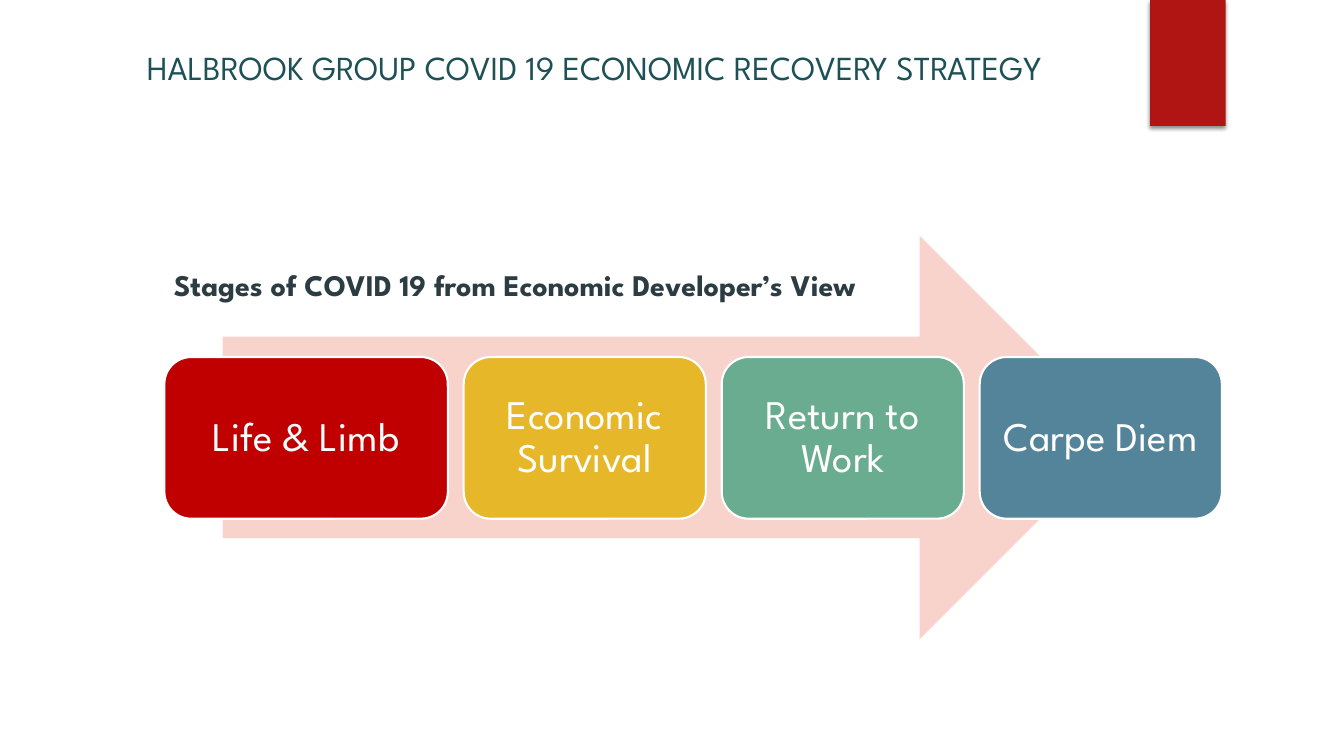
from lxml import etree
from pptx import Presentation
from pptx.dml.color import RGBColor
from pptx.enum.shapes import MSO_SHAPE as Preset
from pptx.enum.text import MSO_ANCHOR as Anchor, PP_ALIGN as Align
from pptx.oxml import parse_xml
from pptx.oxml.ns import nsdecls
from pptx.util import Pt

FONT = "League Spartan"
WHITE = RGBColor(0xFF, 0xFF, 0xFF)
RED = RGBColor(0xB0, 0x15, 0x13)
PINK = RGBColor(0xF7, 0xD3, 0xCC)
TEAL = RGBColor(0x1E, 0x51, 0x55)
SLATE = RGBColor(0x2C, 0x3C, 0x43)
CRIMSON = RGBColor(0xC0, 0x00, 0x00)
GOLD = RGBColor(0xE6, 0xB7, 0x29)
GREEN = RGBColor(0x6A, 0xAC, 0x90)
BLUE = RGBColor(0x54, 0x84, 0x9A)

# Stage label, width in points, fill
STAGES = [
    ("Life & Limb", 202.5, CRIMSON),
    ("Economic Survival", 173, GOLD),
    ("Return to Work", 173, GREEN),
    ("Carpe Diem", 173, BLUE),
]
STAGE_LEFT, STAGE_TOP, STAGE_HEIGHT, STAGE_GAP = 117.4, 255, 115.5, 11.3


def write(frame, text, size, color, bold=False):
    """Fill a text frame with one centred, wrapping paragraph."""
    frame.word_wrap = True
    frame.text = text
    paragraph = frame.paragraphs[0]
    paragraph.alignment = Align.CENTER
    font = paragraph.runs[0].font
    font.name, font.size, font.bold = FONT, Pt(size), bold
    font.color.rgb = color
    return paragraph


def add_heading(slide, text, left, top, width, height, size, color, bold=False):
    box = slide.shapes.add_textbox(Pt(left), Pt(top), Pt(width), Pt(height))
    write(box.text_frame, text, size, color, bold)


def add_block(slide, preset, left, top, width, height, fill):
    """Add a filled shape with neither outline nor shadow."""
    block = slide.shapes.add_shape(preset, Pt(left), Pt(top), Pt(width), Pt(height))
    block.shadow.inherit = False
    block.fill.solid()
    block.fill.fore_color.rgb = fill
    block.line.fill.background()
    return block


def add_corner_tab(slide):
    tab = add_block(slide, Preset.RECTANGLE, 821.5, 0, 54, 90, RED)
    effects = tab.element.spPr.find("{*}effectLst")
    effects.append(parse_xml(
        f'<a:outerShdw {nsdecls("a")} blurRad="{Pt(3)}" dist="{Pt(2)}" dir="5400000"'
        ' rotWithShape="0"><a:srgbClr val="000000"><a:alpha val="45000"/>'
        '</a:srgbClr></a:outerShdw>'))


def add_stage(slide, label, left, width, fill):
    stage = add_block(slide, Preset.ROUNDED_RECTANGLE, left, STAGE_TOP, width,
                      STAGE_HEIGHT, fill)
    stage.line.color.rgb = WHITE
    stage.line.width = Pt(1.5)
    frame = stage.text_frame
    frame.margin_left = frame.margin_right = Pt(8.6)
    frame.margin_top = frame.margin_bottom = Pt(8.6)
    frame.vertical_anchor = Anchor.MIDDLE
    write(frame, label, 29, WHITE).line_spacing = 0.9


def main():
    deck = Presentation()
    deck.slide_width, deck.slide_height = Pt(960), Pt(540)
    slide = deck.slides.add_slide(deck.slide_layouts[6])

    add_corner_tab(slide)
    add_heading(slide, "HALBROOK GROUP COVID 19 ECONOMIC RECOVERY STRATEGY",
                30, 30, 789, 116, 24, TEAL)
    add_heading(slide, "Stages of COVID 19 from Economic Developer’s View",
                -19.5, 187, 774, 74, 21.4, SLATE, bold=True)
    add_block(slide, Preset.RIGHT_ARROW, 159, 168.5, 642, 288, PINK)

    left = STAGE_LEFT
    for label, width, fill in STAGES:
        add_stage(slide, label, left, width, fill)
        left += width + STAGE_GAP

    deck.save("out.pptx")


if __name__ == "__main__":
    main()
